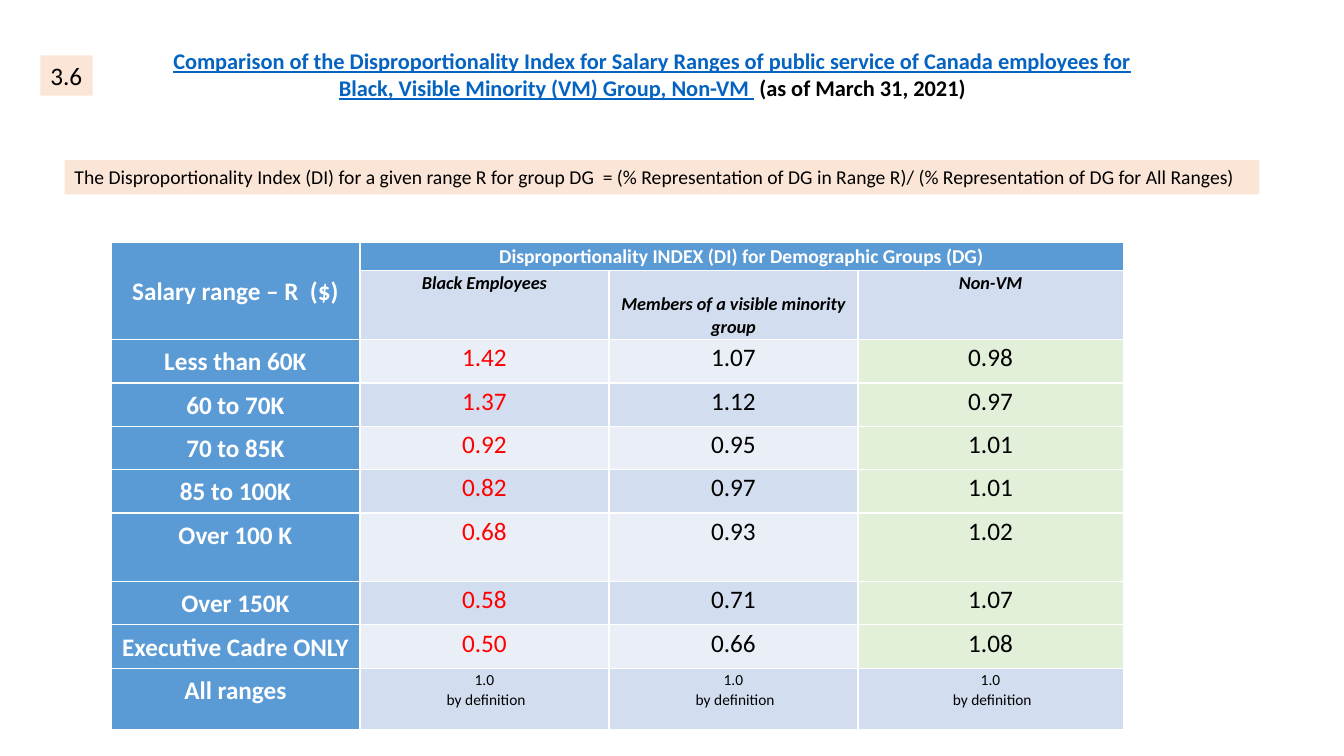
"""Build the slide comparing the Disproportionality Index across salary ranges."""
import pptx
import pptx.dml.color
import pptx.enum.text
import pptx.util

RGBColor = pptx.dml.color.RGBColor
Inches = pptx.util.Inches
Pt = pptx.util.Pt
Anchor = pptx.enum.text.MSO_ANCHOR
Align = pptx.enum.text.PP_ALIGN

WHITE = RGBColor(0xFF, 0xFF, 0xFF)
BLACK = RGBColor(0x00, 0x00, 0x00)
RED = RGBColor(0xFF, 0x00, 0x00)
LINK_BLUE = RGBColor(0x05, 0x63, 0xC1)
HEADER_BLUE = RGBColor(0x5B, 0x9B, 0xD5)
DARK_BAND = RGBColor(0xD2, 0xDE, 0xEF)
LIGHT_BAND = RGBColor(0xEA, 0xEF, 0xF7)
GREEN = RGBColor(0xE2, 0xF0, 0xD9)
PEACH = RGBColor(0xFB, 0xE5, 0xD6)


def set_font(font, size, color, bold=False, italic=False):
    font.name = "Calibri"
    font.size = Pt(size)
    font.color.rgb = color
    font.bold = bold
    font.italic = italic


def fill_cell(cell, text, fill, size, color, bold=False, italic=False,
              margin=0.01, anchor=Anchor.TOP):
    cell.fill.solid()
    cell.fill.fore_color.rgb = fill
    cell.margin_left = cell.margin_right = Inches(margin)
    cell.margin_top = cell.margin_bottom = Inches(margin)
    cell.vertical_anchor = anchor
    cell.text = text
    for para in cell.text_frame.paragraphs:
        para.alignment = Align.CENTER
        para.line_spacing = 1.07
        set_font(para.font, size, color, bold, italic)


deck = pptx.Presentation()
deck.slide_width = Inches(13.33)
deck.slide_height = Inches(7.5)
page = deck.slides.add_slide(deck.slide_layouts[6])

column_widths = [2.47, 2.47, 2.47, 2.63]
row_heights = [0.28, 0.69] + [0.43] * 4 + [0.68, 0.43, 0.43, 0.61]
index_values = [
    ("Less than 60K", "1.42", "1.07", "0.98"),
    ("60 to 70K", "1.37", "1.12", "0.97"),
    ("70 to 85K", "0.92", "0.95", "1.01"),
    ("85 to 100K", "0.82", "0.97", "1.01"),
    ("Over 100 K", "0.68", "0.93", "1.02"),
    ("Over 150K", "0.58", "0.71", "1.07"),
    ("Executive Cadre ONLY", "0.50", "0.66", "1.08"),
]

table = page.shapes.add_table(
    len(row_heights), len(column_widths), Inches(1.1), Inches(2.4),
    Inches(sum(column_widths)), Inches(sum(row_heights))).table
for column, width in zip(table.columns, column_widths):
    column.width = Inches(width)
for row, height in zip(table.rows, row_heights):
    row.height = Inches(height)

table.cell(0, 0).merge(table.cell(1, 0))
table.cell(0, 1).merge(table.cell(0, 3))
fill_cell(table.cell(0, 0), "Salary range – R  ($)", HEADER_BLUE, 18, WHITE,
          bold=True, anchor=Anchor.MIDDLE)
fill_cell(table.cell(0, 1), "Disproportionality INDEX (DI) for Demographic Groups (DG)",
          HEADER_BLUE, 14, WHITE, bold=True)

groups = [("Black Employees", Anchor.TOP),
          ("Members of a visible minority group", Anchor.BOTTOM),
          ("Non-VM", Anchor.TOP)]
for column, (group, anchor) in enumerate(groups, start=1):
    fill_cell(table.cell(1, column), group, DARK_BAND, 13, BLACK,
              bold=True, italic=True, anchor=anchor)

for row, (salary_range, *values) in enumerate(index_values, start=2):
    band = DARK_BAND if row % 2 else LIGHT_BAND
    fill_cell(table.cell(row, 0), salary_range, HEADER_BLUE, 18, WHITE,
              bold=True, margin=0.05)
    styles = [(band, RED), (band, BLACK), (GREEN, BLACK)]
    for column, (value, (fill, color)) in enumerate(zip(values, styles), start=1):
        fill_cell(table.cell(row, column), value, fill, 18, color)

last_row = len(row_heights) - 1
fill_cell(table.cell(last_row, 0), "All ranges", HEADER_BLUE, 18, WHITE,
          bold=True, margin=0.05)
for column in range(1, 4):
    fill_cell(table.cell(last_row, column), "1.0\n by definition", DARK_BAND, 11, BLACK)

title = page.shapes.add_textbox(Inches(1.55), Inches(0.42), Inches(9.84), Inches(0.94))
title.text_frame.word_wrap = True
para = title.text_frame.paragraphs[0]
para.alignment = Align.CENTER
title_parts = [
    ("Comparison of the Disproportionality Index for Salary Ranges of public service of "
     "Canada employees for Black, Visible Minority (VM) Group, Non-VM ", LINK_BLUE, True),
    (" (as of March 31, 2021)", BLACK, False),
]
for text, color, underline in title_parts:
    span = para.add_run()
    span.text = text
    set_font(span.font, 16, color, bold=True)
    span.font.underline = underline

labels = [
    ("The Disproportionality Index (DI) for a given range R for group DG  = "
     "(% Representation of DG in Range R)/ (% Representation of DG for All Ranges)",
     0.64, 1.59, 11.85, 0.34, 14),
    ("3.6", 0.4, 0.55, 0.52, 0.4, 18),
]
for text, left, top, width, height, size in labels:
    box = page.shapes.add_textbox(Inches(left), Inches(top), Inches(width), Inches(height))
    box.fill.solid()
    box.fill.fore_color.rgb = PEACH
    box.text_frame.word_wrap = False
    box.text_frame.auto_size = pptx.enum.text.MSO_AUTO_SIZE.SHAPE_TO_FIT_TEXT
    box.text_frame.text = text
    set_font(box.text_frame.paragraphs[0].font, size, BLACK)

deck.save("out.pptx")
